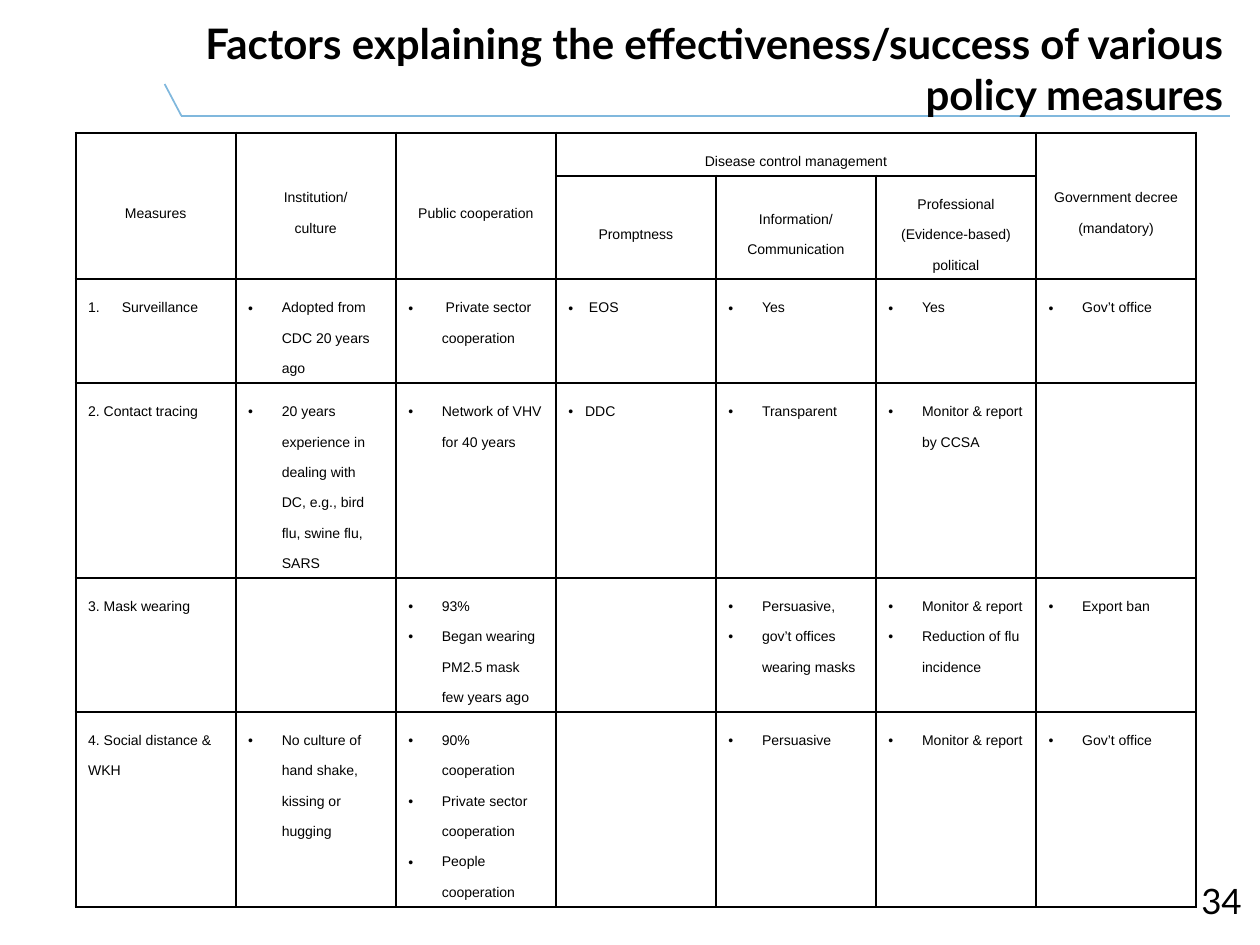
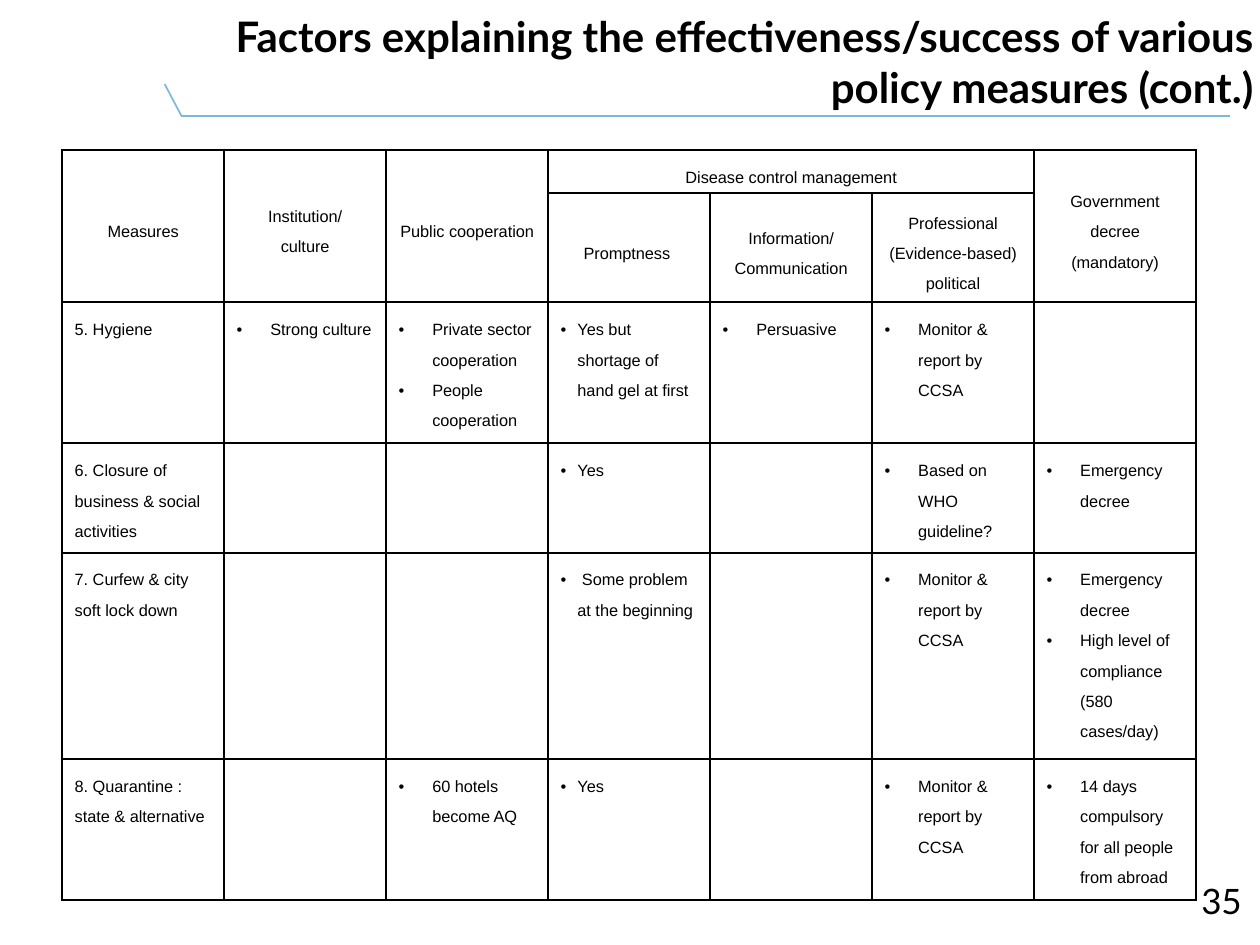
from dataclasses import dataclass

from lxml import etree
from pptx import Presentation
from pptx.dml.color import RGBColor
from pptx.enum.shapes import MSO_CONNECTOR
from pptx.enum.text import MSO_ANCHOR, PP_ALIGN
from pptx.oxml.ns import qn
from pptx.util import Inches, Pt

STRAIGHT = MSO_CONNECTOR.STRAIGHT
MIDDLE, TOP = MSO_ANCHOR.MIDDLE, MSO_ANCHOR.TOP
LEFT, CENTER, RIGHT = PP_ALIGN.LEFT, PP_ALIGN.CENTER, PP_ALIGN.RIGHT


@dataclass(frozen=True)
class Theme:
    """Colours, fonts and sizes that the slides share."""
    ink: str = "000000"
    rule: str = "80B8DD"
    head: str = "Lato"
    body: str = "Arial"
    title: float = 18
    page: float = 15
    lead: float = 13
    thin: float = 0.75
    grid: float = 1


THEME = Theme()
SCALE = 0.75
TITLE = "Factors explaining the effectiveness/success of various policy measures"
HEAD = [
    ("Measures", "Institution/\vculture", "Public cooperation",
     "Disease control management", "", "", "Government decree (mandatory)"),
    ("", "", "", "Promptness", "Information/Communication",
     "Professional (Evidence-based) political", ""),
]
SPLIT = [
    HEAD[0],
    ("", "", "", "Promptness ", "Information/\nCommunication", *HEAD[1][5:]),
]
SPANS = [((0, col), (1, col)) for col in (0, 1, 2, 6)] + [((0, 3), (0, 5))]
HEAD_ROWS = len(HEAD)
SLIM_COL = 3
AUTO = "#"

FIRST = [
    (AUTO + "Surveillance", "Adopted from CDC 20 years ago", " Private sector cooperation",
     " EOS", "Yes", "Yes", "Gov’t office"),
    ("2. Contact tracing",
     "20 years experience in dealing with DC, e.g., bird flu, swine flu, SARS",
     "Network of VHV for 40 years", "DDC", "Transparent", "Monitor & report by CCSA", ""),
    ("3. Mask wearing", "", "93%\nBegan wearing PM2.5 mask few years ago", "",
     "Persuasive,\ngov’t offices wearing masks",
     "Monitor & report\nReduction of flu incidence", "Export ban"),
    ("4. Social distance & WKH", "No culture of hand shake, kissing or hugging",
     "90% cooperation\nPrivate sector cooperation\nPeople cooperation", "",
     "Persuasive", "Monitor & report", "Gov’t office"),
]
SECOND = [
    ("5. Hygiene", "Strong culture", "Private sector cooperation\nPeople cooperation",
     "Yes but shortage of hand gel at first", "Persuasive", "Monitor & report by CCSA", ""),
    ("6. Closure of business & social activities", "", "", "Yes", "",
     "Based on WHO guideline?", "Emergency decree"),
    ("7. Curfew & city soft lock down", "", "", " Some problem at the beginning", "",
     "Monitor & report by CCSA",
     "Emergency decree\nHigh level of compliance (580 cases/day)"),
    ("8. Quarantine : state & alternative", "", "60 hotels become AQ", "Yes", "",
     "Monitor & report by CCSA", "14 days compulsory for all people from abroad"),
]


def style(para, face, size, bold=False):
    """Set the font of a paragraph."""
    font = para.font
    font.name, font.size, font.bold = face, Pt(size), bold
    font.color.rgb = RGBColor.from_string(THEME.ink)


def label(slide, box, text, size, bold=False):
    """Place a right-aligned line of heading text in a box."""
    frame = slide.shapes.add_textbox(*map(Inches, box)).text_frame
    frame.word_wrap = True
    frame.vertical_anchor = MIDDLE
    para = frame.paragraphs[0]
    para.text = text
    para.alignment = RIGHT
    style(para, THEME.head, size, bold)


def band(slide, box):
    """Draw the slanted tick and long rule across a box."""
    left, top, width, height = box
    knee = (left + 0.1, top + height)
    for start, end in (((left, top), knee), (knee, (left + width, top + height))):
        line = slide.shapes.add_connector(STRAIGHT, *map(Inches, start + end))
        line.line.color.rgb = RGBColor.from_string(THEME.rule)
        line.line.width = Pt(THEME.thin)
        etree.SubElement(line._element.spPr, qn("a:effectLst"))


def bullet(para, indent, auto):
    """Give a paragraph a hanging bullet or number."""
    props = para._p.get_or_add_pPr()
    props.set("marL", str(Inches(indent)))
    props.set("indent", str(-Inches(indent)))
    etree.SubElement(props, qn("a:buFont"), typeface=THEME.body)
    if auto:
        etree.SubElement(props, qn("a:buAutoNum"), type="arabicPeriod")
    else:
        etree.SubElement(props, qn("a:buChar"), char="•")


def border(cell):
    """Draw all four edges of a cell."""
    props = cell._tc.get_or_add_tcPr()
    for spot, side in enumerate(("lnL", "lnR", "lnT", "lnB")):
        edge = etree.Element(qn("a:" + side), w=str(Pt(THEME.grid)))
        fill = etree.SubElement(edge, qn("a:solidFill"))
        etree.SubElement(fill, qn("a:srgbClr"), val=THEME.ink)
        props.insert(spot, edge)


def fill_cell(cell, row, col, text, size):
    """Write one cell in the style of its row and column."""
    is_head = row < HEAD_ROWS
    auto = text.startswith(AUTO)
    cell.margin_left = cell.margin_right = Inches(0.1 * SCALE)
    cell.margin_top = cell.margin_bottom = Inches(0.05 * SCALE)
    cell.vertical_anchor = MIDDLE if is_head else TOP
    cell.fill.background()
    border(cell)
    frame = cell.text_frame
    frame.text = text.removeprefix(AUTO)
    for para in frame.paragraphs:
        para.alignment = CENTER if is_head else LEFT
        para.line_spacing = Pt(THEME.lead)
        if text and not is_head and (col or auto):
            bullet(para, 0.1 if col == SLIM_COL else 0.2, auto)
        style(para, THEME.body, size)


def grid(slide, box, rows, heights, size):
    """Build the table of measures in a box."""
    left, top, width, height = box
    count = len(rows[0])
    shape = slide.shapes.add_table(len(rows), count, *map(Inches, box))
    table = shape.table
    table.first_row = table.horz_banding = False
    for part in table.columns:
        part.width = Inches(width / count)
    for part, tall in zip(table.rows, heights):
        part.height = Inches(tall)
    shape.height = Inches(height)
    for row, texts in enumerate(rows):
        for col, text in enumerate(texts):
            fill_cell(table.cell(row, col), row, col, text, size)
    for start, end in SPANS:
        table.cell(*start).merge(table.cell(*end))


def add_page(deck, page, title, spot, box, rows, heights, size):
    """Add a slide with its band, number, title and table."""
    slide = deck.slides.add_slide(deck.slide_layouts[6])
    band(slide, (0.98, 0.5, 6.34, 0.19))
    label(slide, (5.74, 5.21, 1.75, 0.3), page, THEME.page)
    label(slide, (*spot, 6.73, 0.59), title, THEME.title, True)
    grid(slide, box, rows, heights, size)


def main():
    """Build and save the deck."""
    deck = Presentation()
    deck.slide_width, deck.slide_height = Inches(10 * SCALE), Inches(7.5 * SCALE)
    add_page(deck, "34", TITLE, (0.65, 0.11), (0.45, 0.79, 6.67, 4.48),
             HEAD + FIRST, (0,) * 6, 6)
    add_page(deck, "35", TITLE + " (cont.)", (0.83, 0.07), (0.37, 0.89, 6.75, 4.47),
             SPLIT + SECOND, (0.26, 0.65, 0.84, 0.65, 1.23, 0.84), 7)
    deck.save("out.pptx")


if __name__ == "__main__":
    main()
